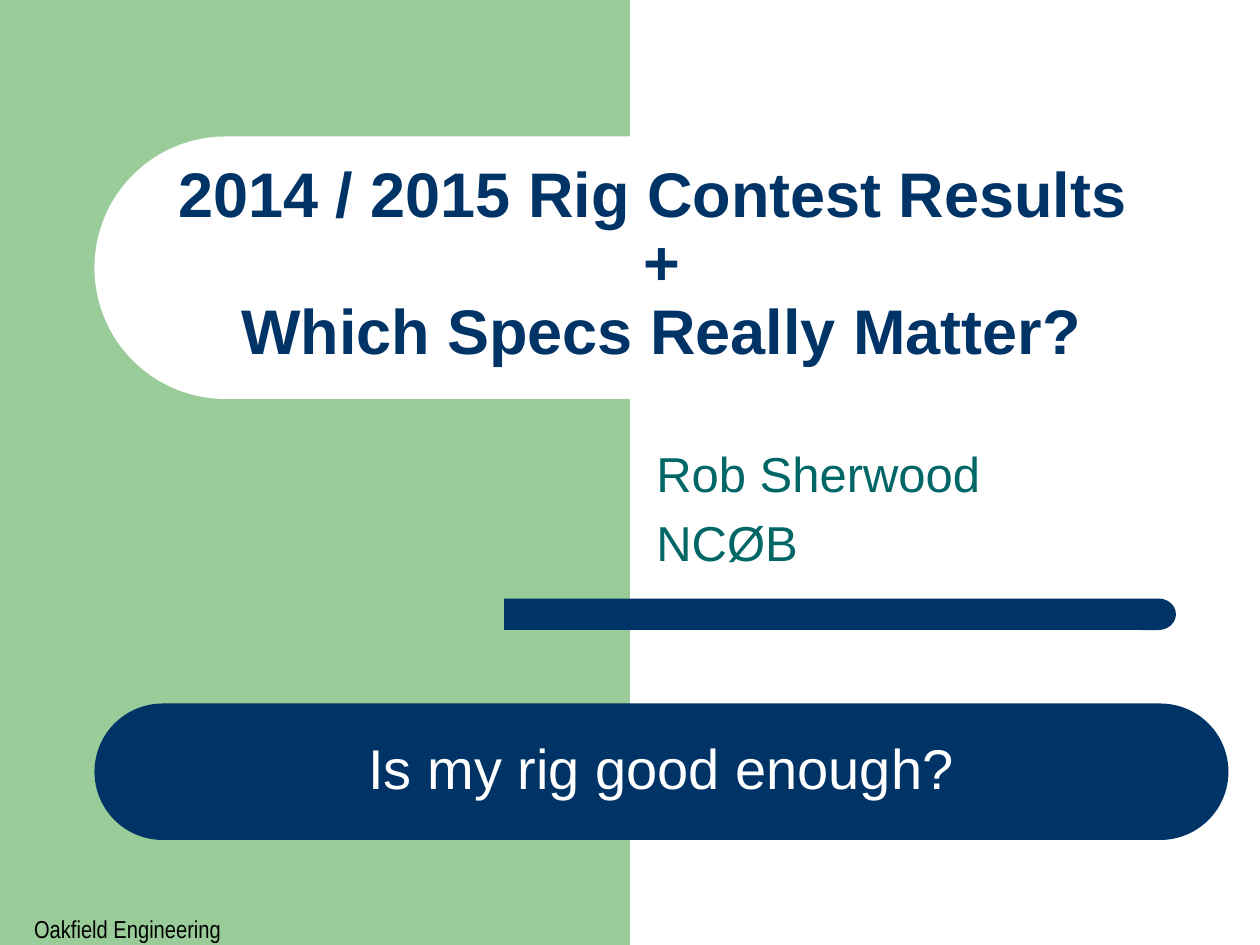
from pptx import Presentation
from pptx.dml.color import RGBColor
from pptx.enum.shapes import MSO_SHAPE
from pptx.enum.text import MSO_ANCHOR, PP_ALIGN
from pptx.util import Pt

GREEN = RGBColor(0x99, 0xCC, 0x99)
NAVY = RGBColor(0x00, 0x33, 0x66)
TEAL = RGBColor(0x00, 0x66, 0x66)
WHITE = RGBColor(0xFF, 0xFF, 0xFF)
BLACK = RGBColor(0x00, 0x00, 0x00)

RECT = MSO_SHAPE.RECTANGLE
PILL = MSO_SHAPE.ROUNDED_RECTANGLE
DELAY = MSO_SHAPE.FLOWCHART_DELAY
TOP, MIDDLE, BOTTOM = MSO_ANCHOR.TOP, MSO_ANCHOR.MIDDLE, MSO_ANCHOR.BOTTOM
LEFT, CENTER = PP_ALIGN.LEFT, PP_ALIGN.CENTER


class Deck:
    font = "Arial"

    def __init__(self, width, height):
        self.prs = Presentation()
        self.prs.slide_width, self.prs.slide_height = Pt(width), Pt(height)
        self.s = self.prs.slides.add_slide(self.prs.slide_layouts[6])

    def shape(self, kind, box, fill):
        sp = self.s.shapes.add_shape(kind, *map(Pt, box))
        sp.shadow.inherit = False
        sp.fill.solid()
        sp.fill.fore_color.rgb = fill
        sp.line.fill.background()
        if kind == PILL:
            sp.adjustments[0] = 0.5
        return sp

    def textbox(self, box):
        return self.s.shapes.add_textbox(*map(Pt, box))

    def text(self, sp, paragraphs, size, color, anchor=MIDDLE, align=CENTER,
             spacing=0.9, before=0, bold=False, font=None):
        tf = sp.text_frame
        tf.word_wrap = True
        tf.vertical_anchor = anchor
        for i, lines in enumerate(paragraphs):
            p = tf.add_paragraph() if i else tf.paragraphs[0]
            p.alignment = align
            p.line_spacing = spacing
            p.space_before = Pt(before)
            for j, line in enumerate(lines):
                if j:
                    p.add_line_break()
                r = p.add_run()
                r.text = line
                r.font.name = font or self.font
                r.font.size = Pt(size)
                r.font.bold = bold
                r.font.color.rgb = color
        return tf


def main():
    deck = Deck(720, 540)
    deck.shape(RECT, (0, 0, 360, 540), GREEN)
    deck.shape(PILL, (54, 78, 462, 150), WHITE)
    deck.shape(RECT, (288, 342, 364, 18), NAVY)
    deck.shape(DELAY, (652, 342, 20, 18), NAVY)

    names = deck.textbox((368, 230.4, 316, 99.6))
    deck.text(names, [["Rob Sherwood"], ["NCØB"]], 28, TEAL,
              anchor=BOTTOM, align=LEFT, spacing=1.0, before=5.6)

    title = deck.textbox((54, 96, 648, 150))
    tf = deck.text(title, [["2014 / 2015 Rig Contest Results ", "+",
                            "Which Specs Really Matter?"]],
                   36, NAVY, bold=True)
    tf.margin_bottom = Pt(42)

    question = deck.shape(PILL, (54, 402, 648, 78), NAVY)
    deck.text(question, [["Is my rig good enough?"]], 32, WHITE)

    footer = deck.textbox((12.4, 522, 147, 21))
    deck.text(footer, [["Oakfield Engineering"]], 14, BLACK, anchor=TOP,
              align=LEFT, spacing=0.8, before=2.8, font="Arial Narrow")

    deck.prs.save("out.pptx")


if __name__ == "__main__":
    main()
